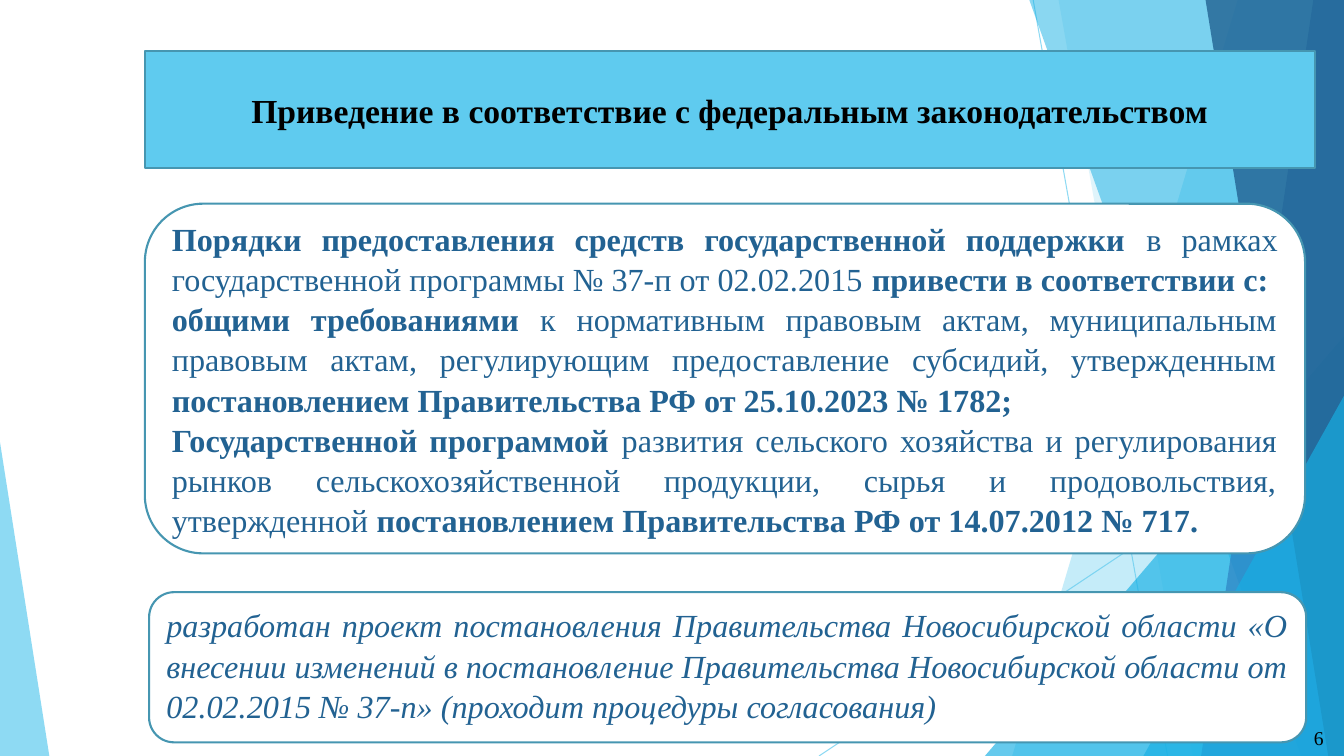
from dataclasses import dataclass

from lxml.etree import SubElement
from pptx import Presentation
from pptx.dml.color import RGBColor
from pptx.enum.shapes import MSO_CONNECTOR, MSO_SHAPE
from pptx.enum.text import MSO_ANCHOR, PP_ALIGN
from pptx.oxml.ns import qn
from pptx.util import Emu, Pt

WIDTH, HEIGHT = 1280, 720
FONT = "Times New Roman"
COLOURS = {
    "sky": "5FCBEF",
    "cyan": "17B0E4",
    "blue": "2E83C3",
    "navy": "226292",
    "outline": "4696B1",
    "white": "FFFFFF",
    "black": "000000",
}


@dataclass(frozen=True)
class Ray:
    start: tuple[int, int]
    end: tuple[int, int]


@dataclass(frozen=True)
class Shard:
    top_x: int
    bottom_x: int
    colour: str
    alpha: int


@dataclass(frozen=True)
class Wedge:
    left: int
    top: int
    width: int
    apex: int
    colour: str
    alpha: int


@dataclass(frozen=True)
class Run:
    text: str
    bold: bool = False


@dataclass(frozen=True)
class Panel:
    box: tuple[int, int, int, int]
    kind: MSO_SHAPE
    fill: str
    text_colour: str
    size: int
    align: PP_ALIGN
    spacing: float
    paragraphs: list[list[Run]]
    italic: bool = False
    margin_bottom: int = 5


RAYS = [Ray((984, 0), (1112, 720)), Ray((1280, 387), (780, 720))]

FACETS = [
    Shard(1179, 964, "sky", 36),
    Shard(1008, 1136, "sky", 20),
    Wedge(938, 320, 342, 1, "cyan", 66),
    Shard(980, 1239, "cyan", 50),
    Shard(1251, 1144, "blue", 70),
    Shard(1148, 1265, "navy", 80),
    Wedge(1089, 377, 191, 1, "cyan", 66),
    Wedge(0, 421, 47, 0, "sky", 70),
]

PANELS = [
    Panel((138, 49, 1114, 111), MSO_SHAPE.RECTANGLE, "sky", "black", 24, PP_ALIGN.CENTER, 1.0, [
        [Run("Приведение в соответствие с федеральным законодательством", True)],
    ]),
    Panel((138, 194, 1105, 333), MSO_SHAPE.ROUNDED_RECTANGLE, "white", "navy", 23, PP_ALIGN.JUSTIFY, 1.04, [
        [
            Run("Порядки предоставления средств государственной поддержки ", True),
            Run("в рамках государственной программы № 37-п от 02.02.2015 "),
            Run("привести в соответствии с:", True),
        ],
        [
            Run("общими требованиями ", True),
            Run("к нормативным правовым актам, муниципальным правовым актам, "
                "регулирующим предоставление субсидий, утвержденным "),
            Run("постановлением Правительства РФ от 25.10.2023 № 1782;", True),
        ],
        [
            Run("Государственной программой ", True),
            Run("развития сельского хозяйства и регулирования рынков "
                "сельскохозяйственной продукции, сырья и продовольствия, утвержденной "),
            Run("постановлением Правительства РФ от 14.07.2012 № 717.", True),
        ],
    ]),
    Panel((142, 564, 1102, 143), MSO_SHAPE.ROUNDED_RECTANGLE, "white", "navy", 23, PP_ALIGN.JUSTIFY, 1.04, [
        [Run("разработан проект постановления Правительства Новосибирской области "
             "«О внесении изменений в постановление Правительства Новосибирской области "
             "от 02.02.2015 № 37-п» (проходит процедуры согласования)")],
    ], italic=True, margin_bottom=10),
]


def px(value: int) -> Emu:
    return Emu(value * 9525)


def rgb(name: str) -> RGBColor:
    return RGBColor.from_string(COLOURS[name])


def set_alpha(shape, percent: int) -> None:
    for colour in shape.element.iter(qn("a:srgbClr")):
        SubElement(colour, qn("a:alpha")).set("val", str(percent * 1000))


def draw_ray(slide, ray: Ray) -> None:
    line = slide.shapes.add_connector(MSO_CONNECTOR.STRAIGHT, *map(px, ray.start + ray.end))
    line.line.color.rgb = rgb("sky")
    line.line.width = Pt(0.75)
    set_alpha(line, 70)
    SubElement(line.element.spPr, qn("a:effectLst"))


def draw_facet(slide, facet: Shard | Wedge) -> None:
    if isinstance(facet, Shard):
        builder = slide.shapes.build_freeform(facet.top_x, -1, scale=px(1))
        builder.add_line_segments([(WIDTH, -1), (WIDTH, HEIGHT), (facet.bottom_x, HEIGHT)])
        shape = builder.convert_to_shape()
    else:
        box = (facet.left, facet.top, facet.width, HEIGHT - facet.top)
        shape = slide.shapes.add_shape(MSO_SHAPE.ISOSCELES_TRIANGLE, *map(px, box))
        shape.adjustments[0] = facet.apex
    shape.shadow.inherit = False
    shape.fill.solid()
    shape.fill.fore_color.rgb = rgb(facet.colour)
    shape.line.fill.background()
    set_alpha(shape, facet.alpha)


def draw_panel(slide, panel: Panel) -> None:
    shape = slide.shapes.add_shape(panel.kind, *map(px, panel.box))
    shape.shadow.inherit = False
    shape.fill.solid()
    shape.fill.fore_color.rgb = rgb(panel.fill)
    shape.line.color.rgb = rgb("outline")
    shape.line.width = Pt(1.5)
    frame = shape.text_frame
    frame.word_wrap = True
    frame.vertical_anchor = MSO_ANCHOR.MIDDLE
    frame.margin_bottom = px(panel.margin_bottom)
    for index, runs in enumerate(panel.paragraphs):
        paragraph = frame.add_paragraph() if index else frame.paragraphs[0]
        paragraph.alignment = panel.align
        paragraph.line_spacing = panel.spacing
        paragraph.font.italic = panel.italic
        style_font(paragraph.font, panel.size, panel.text_colour)
        for item in runs:
            run = paragraph.add_run()
            run.text = item.text
            run.font.bold = item.bold


def style_font(font, size: int, colour: str) -> None:
    font.name = FONT
    font.size = Pt(size)
    font.color.rgb = rgb(colour)


def draw_page_number(slide, number: str) -> None:
    box = slide.shapes.add_textbox(px(1242), px(687), px(29), px(33))
    box.text_frame.word_wrap = False
    paragraph = box.text_frame.paragraphs[0]
    paragraph.text = number
    style_font(paragraph.font, 14, "black")


def main() -> None:
    presentation = Presentation()
    presentation.slide_width, presentation.slide_height = px(WIDTH), px(HEIGHT)
    slide = presentation.slides.add_slide(presentation.slide_layouts[6])
    for ray in RAYS:
        draw_ray(slide, ray)
    for facet in FACETS:
        draw_facet(slide, facet)
    for panel in PANELS:
        draw_panel(slide, panel)
    draw_page_number(slide, "6")
    presentation.save("out.pptx")


if __name__ == "__main__":
    main()
